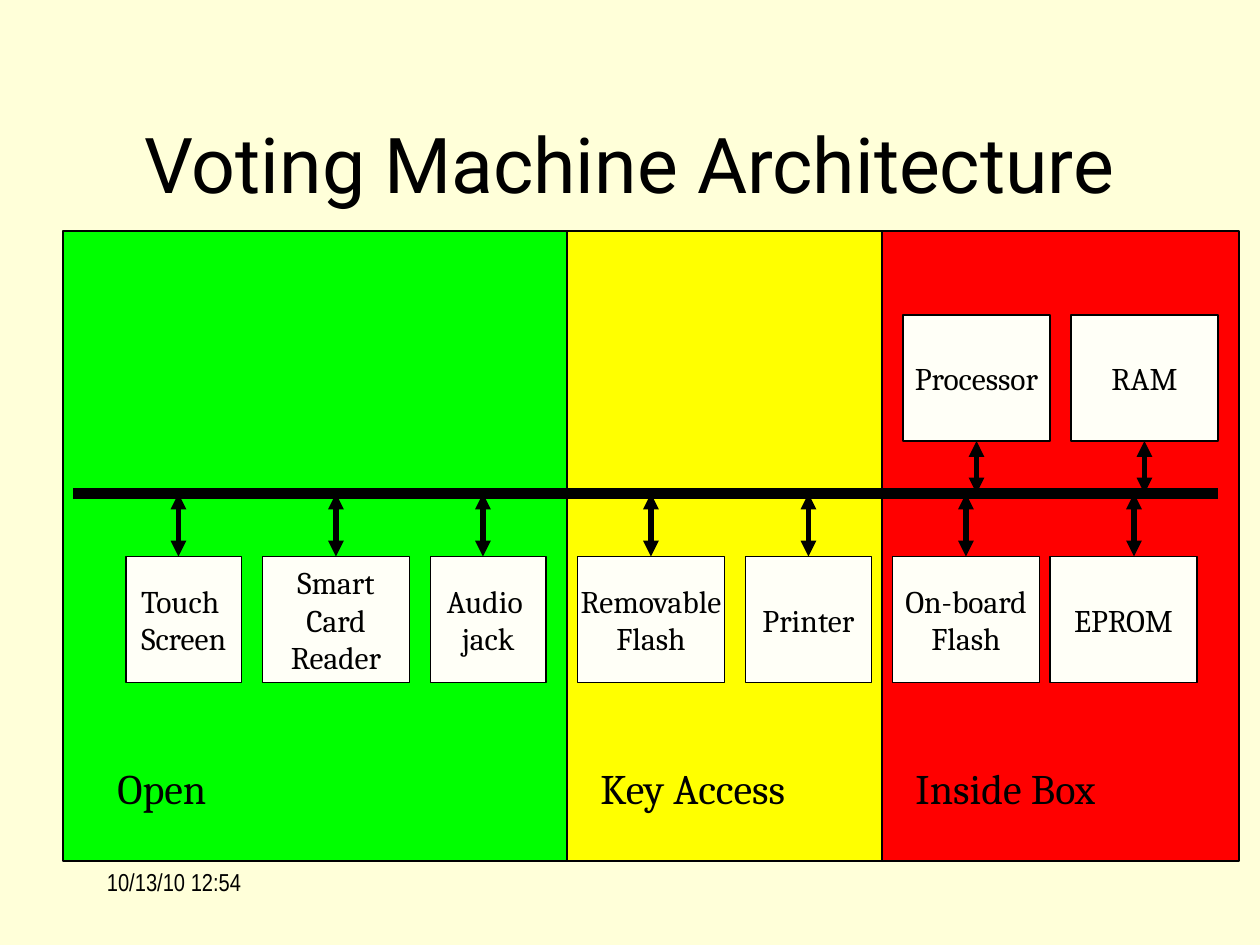
from lxml import etree
from pptx import Presentation
from pptx.enum import shapes, text
from pptx.oxml import ns
from pptx.util import Inches, Pt

COLS, ROWS = 120, 90
WIDE, HIGH = Inches(10), Inches(7.5)
HUE = {"page": "FFFFD9", "open": "00FF00", "key": "FFFF00", "inside": "FF0000",
       "part": "FFFFF7", "ink": "000000"}
FONT = {"title": "Roboto", "body": "Cambria", "date": "Arial Narrow"}
BUS, LOW, TOP, TALL = 25, 31, 8, 12

# Parts are (words, column in zone, width, row in zone, arrow column in zone).
ZONES = [
    ("Open", "open", 48, 4, 39, [("Touch \vScreen", 6, 11, LOW, 11),
                                 ("Smart\vCard\vReader", 19, 14, LOW, 26),
                                 ("Audio \njack", 35, 11, LOW, 40)]),
    ("Key Access", "key", 30, 2, 25, [("Removable\vFlash", 1, 14, LOW, 8),
                                      ("Printer", 17, 12, LOW, 23)]),
    ("Inside Box", "inside", 34, 2, 28, [("On-board\vFlash", 1, 14, LOW, 8),
                                         ("EPROM", 16, 14, LOW, 24),
                                         ("RAM", 18, 14, TOP, 25),
                                         ("Processor", 2, 14, TOP, 9)]),
]


def grid(*cells):
    """Turn column and row pairs into lengths."""
    return [int(c * (HIGH / ROWS if i % 2 else WIDE / COLS)) for i, c in enumerate(cells)]


def tint(color, name):
    """Set a colour by its name."""
    color.rgb = color.rgb.from_string(HUE[name]) if color.type else None


def paint(fill, name):
    """Fill solidly with a named colour."""
    fill.solid()
    fill.fore_color.rgb = RGB(HUE[name])


def RGB(code):
    """Make a colour from a hex string."""
    from pptx.dml.color import RGBColor
    return RGBColor.from_string(code)


def write(frame, words, font, size, align=None, wrap=True):
    """Put formatted words in a text frame."""
    frame.text = words
    frame.word_wrap = wrap
    for para in frame.paragraphs:
        para.alignment = align
        para.font.name, para.font.size = FONT[font], Pt(size)
        para.font.color.rgb = RGB(HUE["ink"])


def block(slide, box, hue):
    """Draw an outlined rectangle."""
    rect = slide.shapes.add_shape(shapes.MSO_SHAPE.RECTANGLE, *grid(*box))
    rect.shadow.inherit = False
    paint(rect.fill, hue)
    rect.line.color.rgb, rect.line.width = RGB(HUE["ink"]), Pt(0.75)
    return rect


def label(slide, box, words, font, size):
    """Add a plain text box."""
    write(slide.shapes.add_textbox(*grid(*box)).text_frame, words, font, size)


def link(slide, ends, width, heads=False):
    """Draw a line, with arrowheads at both ends if asked."""
    wire = slide.shapes.add_connector(shapes.MSO_CONNECTOR.STRAIGHT, *grid(*ends))
    wire.line.color.rgb, wire.line.width = RGB(HUE["ink"]), Pt(width)
    if heads:
        for tag in ("a:headEnd", "a:tailEnd"):
            etree.SubElement(wire.line._get_or_add_ln(), ns.qn(tag), type="triangle")
    etree.SubElement(wire._element.spPr, ns.qn("a:effectLst"))


def part(slide, left, top, item):
    """Draw one part and its arrow to the bus."""
    words, col, width, row, mid = item
    rect = block(slide, (left + col, top + row, width, TALL), "part")
    rect.text_frame.vertical_anchor = text.MSO_ANCHOR.MIDDLE
    write(rect.text_frame, words, "body", 18, text.PP_ALIGN.CENTER, False)
    edge = row if row > BUS else row + TALL
    link(slide, (left + mid, top + max(edge, BUS), left + mid, top + min(edge, BUS)), 3, True)


def zone(slide, box, name, inset, span, items):
    """Fill one access zone with its parts and its name."""
    left, top = box[:2]
    for item in items:
        part(slide, left, top, item)
    label(slide, (left + inset, top + 50, span, 6), name, "body", 24)


def chart(slide, left, top, high):
    """Lay the zones side by side and run the bus across them."""
    start = left
    for name, hue, width, inset, span, items in ZONES:
        box = (left, top, width, high)
        block(slide, box, hue)
        zone(slide, box, name, inset, span, items)
        left += width
    link(slide, (start + 1, top + BUS, left - 2, top + BUS), 6)


def head(slide, box):
    """Place the title."""
    title = slide.shapes.title
    title.left, title.top, title.width, title.height = grid(*box)
    frame = title.text_frame
    write(frame, "Voting Machine Architecture", "title", 44, text.PP_ALIGN.CENTER)
    frame.auto_size = text.MSO_AUTO_SIZE.NONE
    frame.vertical_anchor = text.MSO_ANCHOR.MIDDLE


def main():
    """Build and save the slide."""
    deck = Presentation()
    deck.slide_width, deck.slide_height = WIDE, HIGH
    slide = deck.slides.add_slide(deck.slide_layouts[5])
    paint(slide.background.fill, "page")
    head(slide, (9, 8, 102, 15))
    chart(slide, 6, 22, 60)
    label(slide, (9, 82, 25, 6), "10/13/10 12:54", "date", 14)
    deck.save("out.pptx")


if __name__ == "__main__":
    main()
